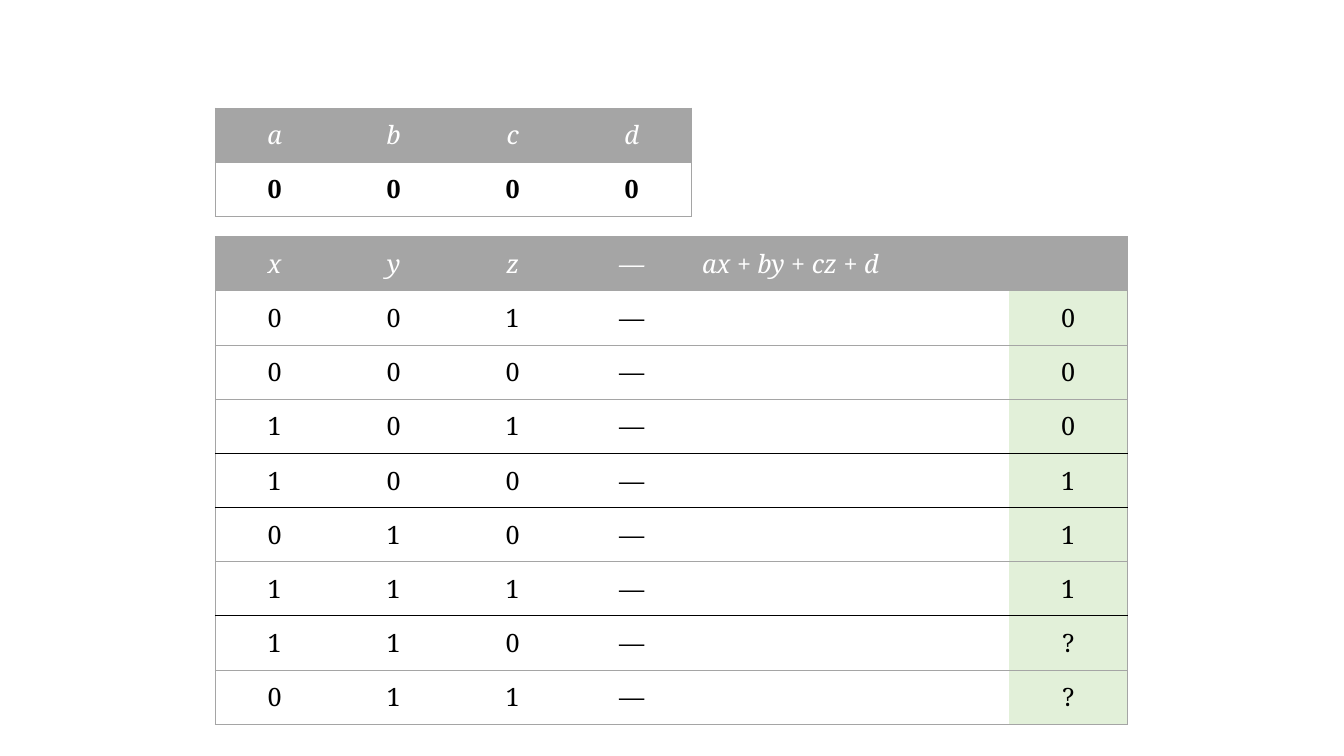
from lxml.etree import SubElement
from pptx import Presentation
from pptx.dml.color import RGBColor
from pptx.enum.text import MSO_ANCHOR, PP_ALIGN
from pptx.oxml.ns import qn
from pptx.util import Cm, Pt

GREY, BLACK, WHITE, GREEN = "A5A5A5", "000000", "FFFFFF", "E2F0D9"
NO_GRID_STYLE = "{2D5ABB26-0587-4C30-8999-92F81FD0307C}"
LEFT, NARROW, WIDE, ROW_HEIGHT, INSET = 5.42, 3, 5, 1.36, 0.25

WEIGHT_NAMES = ["a", "b", "c", "d"]
WEIGHTS = ["0", "0", "0", "0"]
FORMULA = ("ax", " + ", "by", " + ", "cz", " + ", "d")
SAMPLE_HEADER = ["x", "y", "z", "—", FORMULA, "", ""]
SAMPLES = ["0010", "0000", "1010", "1001", "0101", "1111", "110?", "011?"]
BLACK_LINES_BELOW = {3, 4, 6}


def color(value):
    return RGBColor.from_string(value)


def write(cell, parts, ink=BLACK, italic=False, bold=False):
    """Centre the parts in the cell; operators stay upright."""
    para = cell.text_frame.paragraphs[0]
    para.alignment = PP_ALIGN.CENTER
    for part in parts:
        span = para.add_run()
        span.text = part
        span.font.name = "Noto Serif"
        span.font.size = Pt(18)
        span.font.italic = italic and "+" not in part
        span.font.bold = bold
        span.font.color.rgb = color(ink)


def add_border(cell, side, ink, width):
    """Draw the side named L, R, T or B; call in that order, before filling."""
    properties = cell._tc.get_or_add_tcPr()
    line = SubElement(properties, qn(f"a:ln{side}"), w=str(Pt(width)))
    fill = SubElement(line, qn("a:solidFill"))
    SubElement(fill, qn("a:srgbClr"), val=ink)


def line_below(row, black_lines):
    return (BLACK, 1) if row in black_lines else (GREY, 0.5)


def format_cell(cell, row, first, last, black_lines, fill):
    cell.margin_left = cell.margin_right = Cm(INSET)
    cell.margin_top = cell.margin_bottom = Cm(INSET)
    cell.vertical_anchor = MSO_ANCHOR.MIDDLE
    if first:
        add_border(cell, "L", GREY, 0.5)
    if last:
        add_border(cell, "R", GREY, 0.5)
    add_border(cell, "T", *line_below(row - 1, black_lines))
    add_border(cell, "B", *line_below(row, black_lines))
    if fill:
        cell.fill.solid()
        cell.fill.fore_color.rgb = color(fill)
    else:
        cell.fill.background()


def add_grid(page, rows, widths, top, black_lines=(), last_fill=None, bold=False):
    """Add a table with a grey header row and ruled body rows."""
    frame = page.shapes.add_table(len(rows), len(widths), Cm(LEFT), Cm(top),
                                  Cm(sum(widths)), Cm(ROW_HEIGHT * len(rows)))
    table = frame.table
    table.first_row = table.horz_banding = False
    table._tbl.tblPr.find(qn("a:tableStyleId")).text = NO_GRID_STYLE
    for column, width in zip(table.columns, widths):
        column.width = Cm(width)
    for number, texts in enumerate(rows):
        table.rows[number].height = Cm(ROW_HEIGHT)
        header = number == 0
        for index, parts in enumerate(texts):
            cell = table.cell(number, index)
            last = index == len(widths) - 1
            fill = GREY if header else last_fill if last else None
            format_cell(cell, number, index == 0, last, black_lines, fill)
            write(cell, parts, ink=WHITE if header else BLACK,
                  italic=header, bold=bold and not header)


def main():
    deck = Presentation()
    deck.slide_width, deck.slide_height = Cm(33.87), Cm(19.05)
    page = deck.slides.add_slide(deck.slide_layouts[6])

    samples = [[*bits[:3], "—", "", "", bits[3]] for bits in SAMPLES]
    add_grid(page, [SAMPLE_HEADER, *samples], [NARROW] * 4 + [WIDE] + [NARROW] * 2,
             top=5.96, black_lines=BLACK_LINES_BELOW, last_fill=GREEN)
    add_grid(page, [WEIGHT_NAMES, WEIGHTS], [NARROW] * 4, top=2.72, bold=True)

    deck.save("out.pptx")


if __name__ == "__main__":
    main()
